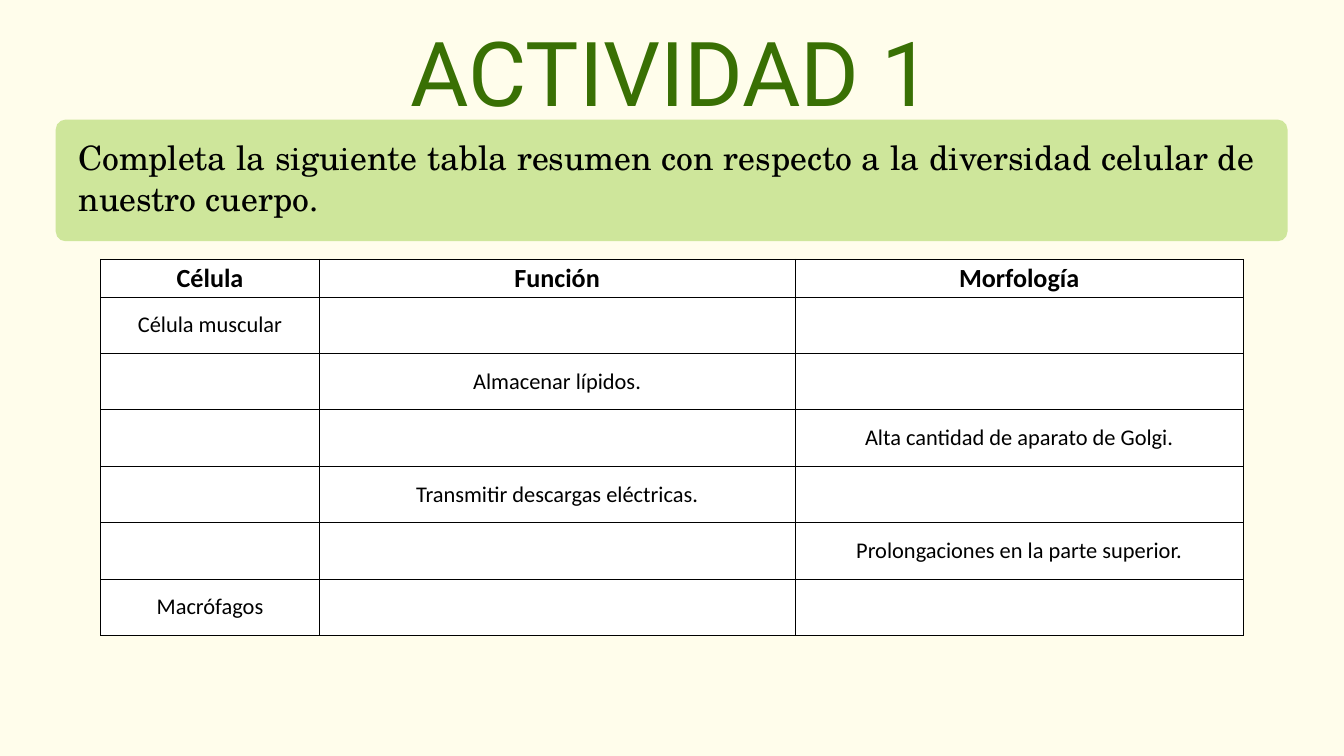
"""Build the activity slide with a summary table on cell diversity."""
from dataclasses import dataclass

from lxml import etree
from pptx import Presentation
from pptx.dml.color import RGBColor
from pptx.enum import shapes, text
from pptx.oxml import ns
from pptx.util import Inches, Pt


@dataclass(frozen=True)
class Theme:
    background: str = "FFFDEB"
    title: str = "397004"
    banner: str = "CEE69B"
    ink: str = "000000"
    cell: str = "FFFFFF"
    title_size: int = 96
    title_spacing: int = 140
    instruction_size: int = 36
    header_size: int = 28
    body_size: int = 24
    border_width: int = 1
    title_font: str = "Roboto"
    instruction_font: str = "TeX Gyre Schola"
    table_font: str = "Calibri"


def write(frame, content, font, size, color, alignment, bold=False):
    frame.text = content
    paragraph = frame.paragraphs[0]
    paragraph.alignment = alignment
    style = paragraph.runs[0].font if paragraph.runs else paragraph.font
    style.name, style.size, style.bold = font, Pt(size), bold
    style.color.rgb = RGBColor.from_string(color)


def add_borders(cell, color, width):
    properties = cell._tc.get_or_add_tcPr()
    for position, side in enumerate(("lnL", "lnR", "lnT", "lnB")):
        line = etree.Element(ns.qn(f"a:{side}"), w=str(Pt(width)))
        fill = etree.SubElement(line, ns.qn("a:solidFill"))
        etree.SubElement(fill, ns.qn("a:srgbClr"), val=color)
        properties.insert(position, line)


theme = Theme()
presentation = Presentation()
presentation.slide_width, presentation.slide_height = Inches(20), Inches(11.25)
slide = presentation.slides.add_slide(presentation.slide_layouts[6])
slide.background.fill.solid()
slide.background.fill.fore_color.rgb = RGBColor.from_string(theme.background)

banner = slide.shapes.add_shape(
    shapes.MSO_SHAPE.ROUNDED_RECTANGLE, Inches(0.83), Inches(1.78), Inches(18.33), Inches(1.81))
banner.adjustments[0] = 0.08
banner.shadow.inherit = False
banner.fill.solid()
banner.fill.fore_color.rgb = RGBColor.from_string(theme.banner)
banner.line.fill.background()

TEXTS = (
    ((6.11, -0.09, 7.77, 1.81), "ACTIVIDAD 1", theme.title_font, theme.title_size,
     theme.title, text.PP_ALIGN.CENTER, theme.title_spacing),
    ((1.17, 2.04, 17.5, 1.21),
     "Completa la siguiente tabla resumen con respecto a la diversidad celular de nuestro cuerpo.",
     theme.instruction_font, theme.instruction_size, theme.ink, text.PP_ALIGN.JUSTIFY, None),
)
for box, content, font, size, color, alignment, spacing in TEXTS:
    frame = slide.shapes.add_textbox(*map(Inches, box)).text_frame
    frame.word_wrap = True
    frame.margin_left = frame.margin_right = frame.margin_top = frame.margin_bottom = 0
    write(frame, content, font, size, color, alignment)
    if spacing:
        frame.paragraphs[0].line_spacing = Pt(spacing)

ROWS = (
    ("Célula", "Función", "Morfología"),
    ("Célula muscular", "", ""),
    ("", "Almacenar lípidos.", ""),
    ("", "", "Alta cantidad de aparato de Golgi."),
    ("", "Transmitir descargas eléctricas.", ""),
    ("", "", "Prolongaciones en la parte superior."),
    ("Macrófagos", "", ""),
)
COLUMN_WIDTHS = (3.25, 7.08, 6.67)
HEADER_HEIGHT, BODY_HEIGHT = 0.56, 0.84

table = slide.shapes.add_table(
    len(ROWS), len(COLUMN_WIDTHS), Inches(1.5), Inches(3.86), Inches(17), Inches(5.6)).table
for column, width in zip(table.columns, COLUMN_WIDTHS):
    column.width = Inches(width)
for row_index, values in enumerate(ROWS):
    is_header = row_index == 0
    table.rows[row_index].height = Inches(HEADER_HEIGHT if is_header else BODY_HEIGHT)
    size = theme.header_size if is_header else theme.body_size
    for column_index, value in enumerate(values):
        cell = table.cell(row_index, column_index)
        cell.fill.solid()
        cell.fill.fore_color.rgb = RGBColor.from_string(theme.cell)
        cell.vertical_anchor = text.MSO_ANCHOR.MIDDLE
        cell.margin_top = cell.margin_bottom = Inches(0.03)
        write(cell.text_frame, value, theme.table_font, size, theme.ink,
              text.PP_ALIGN.CENTER, is_header)
        add_borders(cell, theme.ink, theme.border_width)

presentation.save("out.pptx")
